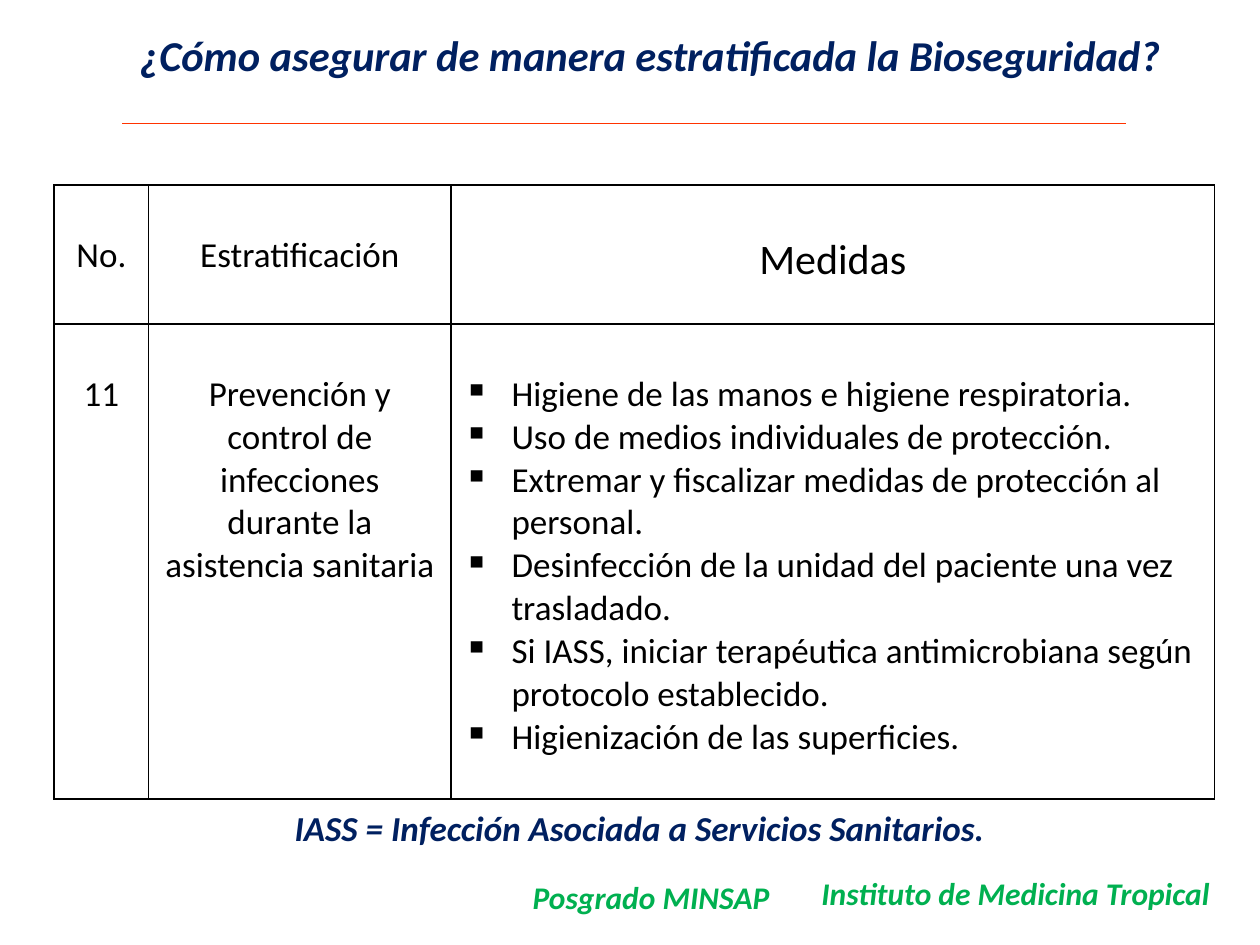
from dataclasses import dataclass

from lxml.etree import SubElement
from pptx import Presentation
from pptx.dml.color import RGBColor
from pptx.enum.shapes import MSO_CONNECTOR
from pptx.enum.text import MSO_ANCHOR, MSO_AUTO_SIZE, PP_ALIGN
from pptx.oxml.ns import qn
from pptx.util import Inches, Pt

COLORS = {"navy": "002060", "green": "00B050", "red": "FF3300", "black": "000000"}
COLUMN_WIDTHS = (0.75, 2.4, 6.06)
ROW_HEIGHTS = (1.1, 3.77)
HEADINGS = (("No.", 20), ("Estratificación", 20), ("Medidas", 24))
STRATUM = ("11", "Prevención y control de infecciones durante la asistencia sanitaria")
MEASURES = (
    "Higiene de las manos e higiene respiratoria.",
    "Uso de medios individuales de protección.",
    "Extremar y fiscalizar medidas de protección al personal.",
    "Desinfección de la unidad del paciente una vez trasladado.",
    "Si IASS, iniciar terapéutica antimicrobiana según protocolo establecido.",
    "Higienización de las superficies.",
)


@dataclass(frozen=True)
class Label:
    """A line of free text with its place and format."""
    text: str
    left: float
    top: float
    width: float
    height: float
    size: float
    color: str


LABELS = (
    Label("Posgrado MINSAP", 4.13, 6.92, 2.1, 0.4, 18, "green"),
    Label("IASS = Infección Asociada a Servicios Sanitarios.", 2.24, 6.35, 5.71, 0.44, 20, "navy"),
    Label("Instituto de Medicina Tropical", 6.42, 6.89, 3.32, 0.4, 18, "green"),
)


def write(frame, *lines: str, size: float = 20, color: str = "black",
          emphasis: bool = False, align=PP_ALIGN.CENTER, bullet: str = "") -> None:
    """Write one paragraph per line in the given format."""
    for index, line in enumerate(lines):
        para = frame.paragraphs[0] if index == 0 else frame.add_paragraph()
        para.alignment = align
        if bullet:
            properties = para._p.get_or_add_pPr()
            properties.set("marL", str(Inches(0.38)))
            properties.set("indent", str(-Inches(0.38)))
            SubElement(properties, qn("a:buChar"), char=bullet)
        span = para.add_run()
        span.text = line
        span.font.name = "Calibri"
        span.font.size = Pt(size)
        span.font.bold = span.font.italic = emphasis
        span.font.color.rgb = RGBColor.from_string(COLORS[color])


def add_title(page, text: str) -> None:
    """Fill and place the title placeholder."""
    title = page.shapes.title
    title.left, title.top = Inches(0.83), Inches(0.21)
    title.width, title.height = Inches(8.66), Inches(0.45)
    frame = title.text_frame
    frame.auto_size = MSO_AUTO_SIZE.NONE
    frame.vertical_anchor = MSO_ANCHOR.MIDDLE
    write(frame, text, size=24.3, color="navy", emphasis=True)


def add_rule(page) -> None:
    """Draw the line under the title."""
    rule = page.shapes.add_connector(
        MSO_CONNECTOR.STRAIGHT, Inches(0.97), Inches(0.98), Inches(8.94), Inches(0.98))
    rule.line.color.rgb = RGBColor.from_string(COLORS["red"])
    rule.line.width = Pt(1)
    SubElement(rule._element.spPr, qn("a:effectLst"))


def add_label(page, label: Label) -> None:
    """Add an unwrapped text box."""
    box = page.shapes.add_textbox(
        Inches(label.left), Inches(label.top), Inches(label.width), Inches(label.height))
    frame = box.text_frame
    frame.word_wrap = False
    frame.auto_size = MSO_AUTO_SIZE.SHAPE_TO_FIT_TEXT
    write(frame, label.text, size=label.size, color=label.color,
          emphasis=True, align=PP_ALIGN.LEFT)


def format_cell(cell) -> None:
    """Give a cell thin borders, no fill and a deep top margin."""
    properties = cell._tc.get_or_add_tcPr()
    for side in ("lnL", "lnR", "lnT", "lnB"):
        border = SubElement(properties, qn(f"a:{side}"), w=str(Pt(1)))
        fill = SubElement(border, qn("a:solidFill"))
        SubElement(fill, qn("a:srgbClr"), val=COLORS["black"])
    cell.fill.background()
    cell.margin_top = Inches(0.39)


def add_measures_table(page) -> None:
    """Build the table of measures."""
    table = page.shapes.add_table(
        len(ROW_HEIGHTS), len(COLUMN_WIDTHS), Inches(0.43), Inches(1.47),
        Inches(sum(COLUMN_WIDTHS)), Inches(sum(ROW_HEIGHTS))).table
    table.first_row = table.horz_banding = False
    for column, width in zip(table.columns, COLUMN_WIDTHS):
        column.width = Inches(width)
    for row, height in zip(table.rows, ROW_HEIGHTS):
        row.height = Inches(height)
    for cell in table.iter_cells():
        format_cell(cell)
    for index, (heading, size) in enumerate(HEADINGS):
        write(table.cell(0, index).text_frame, heading, size=size)
    for index, text in enumerate(STRATUM):
        write(table.cell(1, index).text_frame, text)
    write(table.cell(1, 2).text_frame, *MEASURES, align=PP_ALIGN.LEFT, bullet="▪")


def main() -> None:
    """Build and save the deck."""
    deck = Presentation()
    deck.slide_width, deck.slide_height = Inches(10), Inches(7.5)
    page = deck.slides.add_slide(deck.slide_layouts[5])
    add_title(page, "¿Cómo asegurar de manera estratificada la Bioseguridad?")
    add_rule(page)
    add_measures_table(page)
    for label in LABELS:
        add_label(page, label)
    deck.save("out.pptx")


if __name__ == "__main__":
    main()
